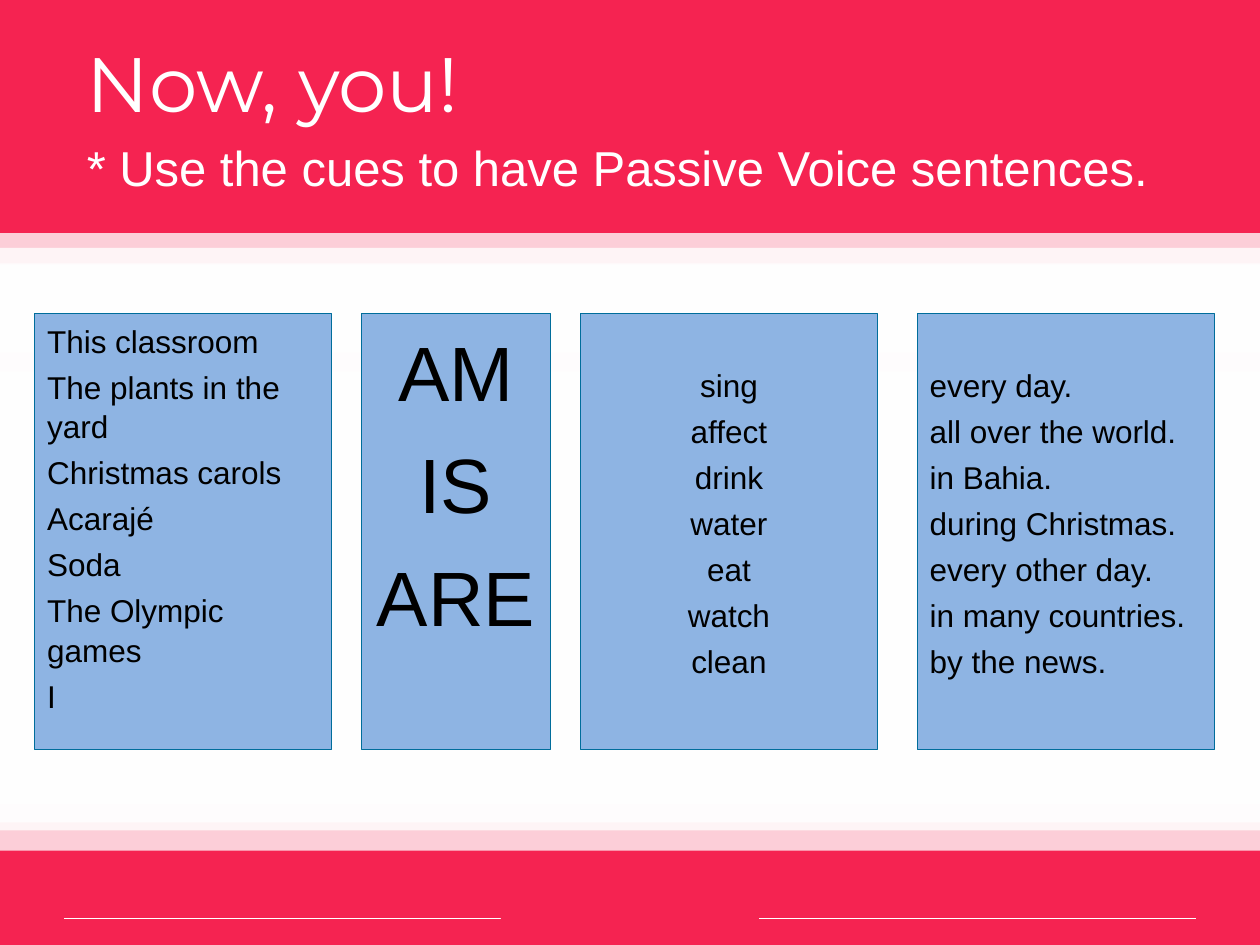
from dataclasses import dataclass

from lxml.etree import SubElement
from pptx import Presentation
from pptx.dml.color import RGBColor
from pptx.enum.shapes import MSO_CONNECTOR as CONN, MSO_SHAPE as SHAPE
from pptx.enum.text import MSO_ANCHOR as ANCHOR, PP_ALIGN as ALIGN
from pptx.oxml.ns import qn
from pptx.util import Cm, Pt


@dataclass(frozen=True)
class Theme:
    red: str = "F52351"
    white: str = "FFFFFF"
    black: str = "000000"
    card: str = "8EB4E3"
    card_line: str = "006D9B"
    heading_font: str = "Montserrat"
    body_font: str = "Arial"
    big: int = 44
    subtitle: int = 28
    body: int = 18


WIDTH, HEIGHT = 25.4, 19.05
FOOTER_TOP, FOOTER_HEIGHT = 17.73, 1.32
CARD_TOP, CARD_HEIGHT, CARD_WIDTH, VERB_WIDTH = 6.32, 8.79, 5.99, 3.81
INSET = 0.13
ROW = 0.89  # one line of body text with its spacing

# top and height of the translucent white bands, which add up to a soft edge
BANDS = [
    (5.31, 1.8), (5, 1.8), (4.7, 1.3),
    (7.49, 9.09), (5.33, 10.39), (6.43, 8.59),
    (14.81, 2.34), (14.4, 2.34), (5.59, 10.62),
]

SUBJECTS = ["This classroom", "The plants in the yard", "Christmas carols",
            "Acarajé", "Soda", "The Olympic games", "I"]
TO_BE = ["AM", "IS", "ARE"]
VERBS = ["sing", "affect", "drink", "water", "eat", "watch", "clean"]
ENDINGS = ["every day.", "all over the world.", "in Bahia.",
           "during Christmas.", "every other day.", "in many countries.",
           "by the news."]


class Deck:
    def __init__(self, theme):
        self.theme = theme
        self.prs = Presentation()
        self.prs.slide_width, self.prs.slide_height = Cm(WIDTH), Cm(HEIGHT)
        self.s = self.prs.slides.add_slide(self.prs.slide_layouts[6])

    def rect(self, x, y, w, h, color, alpha=None, line=None):
        sp = self.s.shapes.add_shape(SHAPE.RECTANGLE, Cm(x), Cm(y), Cm(w), Cm(h))
        sp.shadow.inherit = False
        sp.fill.solid()
        sp.fill.fore_color.rgb = RGBColor.from_string(color)
        if alpha is not None:
            clr = sp.fill._xPr.find(".//" + qn("a:srgbClr"))
            SubElement(clr, qn("a:alpha"), val=str(alpha * 1000))
        if line:
            sp.line.color.rgb = RGBColor.from_string(line)
            sp.line.width = Pt(0.75)
        else:
            sp.line.fill.background()
        return sp

    def rule(self, x1, x2, y):
        c = self.s.shapes.add_connector(CONN.STRAIGHT, Cm(x1), Cm(y), Cm(x2), Cm(y))
        c.line.color.rgb = RGBColor.from_string(self.theme.white)
        c.line.width = Pt(0.25)
        SubElement(c._element.spPr, qn("a:effectLst"))

    def paragraph(self, tf, text, size, font, color, first, align=ALIGN.LEFT):
        p = tf.paragraphs[0] if first else tf.add_paragraph()
        p.alignment = align
        if not first:
            p.space_before = Pt(size * 0.2)
        r = p.add_run()
        r.text = text
        r.font.size, r.font.name = Pt(size), font
        r.font.color.rgb = RGBColor.from_string(color)
        return p

    def card(self, x, w, lines, size, align=ALIGN.LEFT, skip=0):
        """Blue word box; its text starts `skip` rows below the top."""
        t = self.theme
        sp = self.rect(x, CARD_TOP, w, CARD_HEIGHT, t.card, line=t.card_line)
        tf = sp.text_frame
        tf.word_wrap, tf.vertical_anchor = True, ANCHOR.TOP
        tf.margin_top = Cm(INSET + skip * ROW)
        for i, text in enumerate(lines):
            p = self.paragraph(tf, text, size, t.body_font, t.black, i == 0, align)
            p.line_spacing = 1.05

    def title(self, x, y, w, h, heading, subtitle):
        t = self.theme
        tf = self.s.shapes.add_textbox(Cm(x), Cm(y), Cm(w), Cm(h)).text_frame
        tf.word_wrap, tf.vertical_anchor = True, ANCHOR.MIDDLE
        self.paragraph(tf, heading, t.big, t.heading_font, t.white, True)
        self.paragraph(tf, subtitle, t.subtitle, t.body_font, t.white, False)


def main():
    t = Theme()
    d = Deck(t)
    d.rect(0, 0, WIDTH, HEIGHT, t.red)
    d.rect(0, FOOTER_TOP, WIDTH, FOOTER_HEIGHT, t.red)
    d.rule(1.3, WIDTH - 1.3, 18.52)
    d.rect(10.1, FOOTER_TOP, 5.2, FOOTER_HEIGHT, t.red)
    for top, height in BANDS:
        d.rect(0, top, WIDTH, height, t.white, alpha=78)

    d.title(1.5, 0.53, 22.6, 3.61, "Now, you!",
            "* Use the cues to have Passive Voice sentences.")
    d.card(0.7, CARD_WIDTH, SUBJECTS, t.body)
    d.card(7.29, VERB_WIDTH, TO_BE, t.big, ALIGN.CENTER)
    d.card(11.7, CARD_WIDTH, VERBS, t.body, ALIGN.CENTER, skip=1)
    d.card(18.49, CARD_WIDTH, ENDINGS, t.body, skip=1)
    d.prs.save("out.pptx")


if __name__ == "__main__":
    main()
